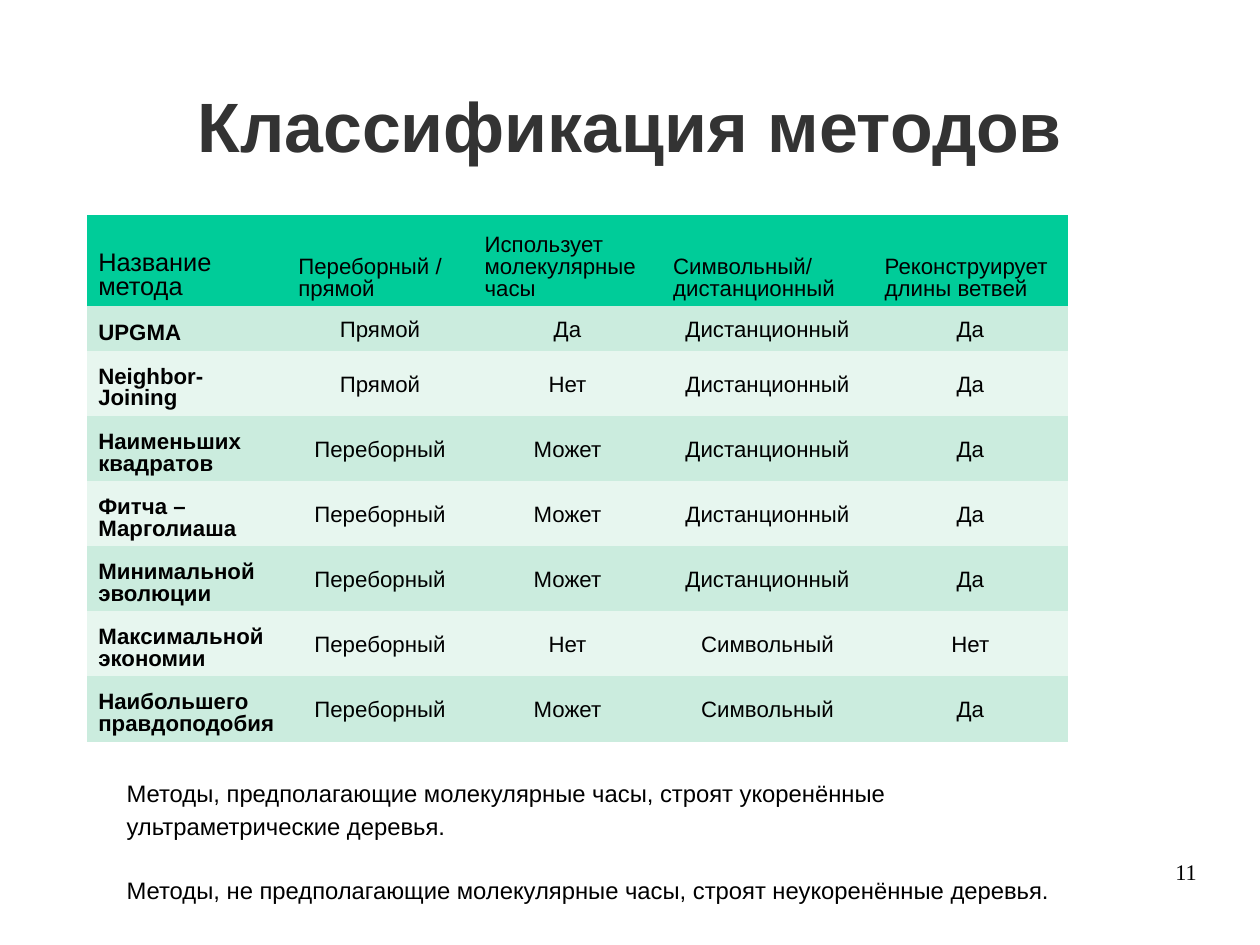
from lxml.etree import SubElement
from pptx import Presentation
from pptx.dml.color import RGBColor as RGB
from pptx.enum.text import MSO_ANCHOR as Anchor, PP_ALIGN as Align
from pptx.oxml.ns import qn
from pptx.util import Inches, Pt

COLORS = {
    "title": "333333",
    "text": "000000",
    "head": "00CC99",
    "dark": "CBECDE",
    "light": "E7F6EF",
}


def write(box, text, size=14, color="text", font="Arial", bold=False,
          align=Align.LEFT, anchor=Anchor.TOP, space=0.87, gap=0,
          pad=(0.1, 0.09, 0.1, 0.05)):
    box.margin_left, box.margin_top, box.margin_right, box.margin_bottom = map(Inches, pad)
    box.vertical_anchor = anchor
    frame = getattr(box, "text_frame", box)
    frame.word_wrap = True
    for i, line in enumerate(text.split("\n")):
        para = frame.add_paragraph() if i else frame.paragraphs[0]
        para.text = line
        para.alignment = align
        para.line_spacing = space
        para.space_before = Pt(gap if i else 0)
        for run in para.runs:
            run.font.size = Pt(size)
            run.font.name = font
            run.font.bold = bold
            run.font.color.rgb = RGB.from_string(COLORS[color])
        for br in para._p.iter(qn("a:br")):
            SubElement(br, qn("a:rPr"), sz=str(size * 100))


prs = Presentation()
prs.slide_width = Inches(28 / 2.54)
prs.slide_height = Inches(21 / 2.54)
slide = prs.slides.add_slide(prs.slide_layouts[6])
shapes = slide.shapes

title = shapes.add_textbox(Inches(0.81), Inches(0.47), Inches(9.41), Inches(1.28))
write(title.text_frame, "Классификация методов", size=44, color="title", bold=True,
      align=Align.CENTER, anchor=Anchor.MIDDLE, space=0.93, pad=(0, 0.04, 0, 0))

notes = shapes.add_textbox(Inches(1.01), Inches(6.71), Inches(8.5), Inches(1.42))
write(notes.text_frame,
      "Методы, предполагающие молекулярные часы, строят укоренённые ультраметрические деревья.\n"
      "Методы, не предполагающие молекулярные часы, строят неукоренённые деревья.",
      size=15, space=1.14, gap=20, pad=(0.1, 0.07, 0.1, 0.05))

rows = [
    ("Название метода", "Переборный / прямой", "Использует молекулярные часы",
     "Символьный/\vдистанционный", "Реконструирует длины ветвей"),
    ("UPGMA", "Прямой", "Да", "Дистанционный", "Да"),
    ("Neighbor-Joining", "Прямой", "Нет", "Дистанционный", "Да"),
    ("Наименьших квадратов", "Переборный", "Может", "Дистанционный", "Да"),
    ("Фитча – Марголиаша", "Переборный", "Может", "Дистанционный", "Да"),
    ("Минимальной эволюции", "Переборный", "Может", "Дистанционный", "Да"),
    ("Максимальной экономии", "Переборный", "Нет", "Символьный", "Нет"),
    ("Наибольшего правдоподобия", "Переборный", "Может", "Символьный", "Да"),
]
widths = [1.75, 1.63, 1.65, 1.85, 1.7]
heights = [0.8, 0.39] + [0.57] * 6

table = shapes.add_table(len(rows), len(widths), Inches(0.76), Inches(1.88),
                         Inches(sum(widths)), Inches(sum(heights))).table
table.first_row = False
table.horz_banding = False
for col, width in zip(table.columns, widths):
    col.width = Inches(width)
for r, (row, height) in enumerate(zip(rows, heights)):
    table.rows[r].height = Inches(height)
    fill = "head" if r == 0 else "dark" if r % 2 else "light"
    for c, text in enumerate(row):
        cell = table.cell(r, c)
        cell.fill.solid()
        cell.fill.fore_color.rgb = RGB.from_string(COLORS[fill])
        label = r == 0 or c == 0
        write(cell, text, size=16 if r == c == 0 else 14, bold=r > 0 and c == 0,
              align=Align.LEFT if label else Align.CENTER,
              anchor=Anchor.BOTTOM if label else Anchor.MIDDLE)
style = table._tbl.tblPr.find(qn("a:tableStyleId"))
style.text = "{2D5ABB26-0587-4C30-8999-92F81FD0307C}"

page = shapes.add_textbox(Inches(7.9), Inches(7.53), Inches(2.57), Inches(0.57))
write(page.text_frame, "11", font="Times New Roman", align=Align.RIGHT,
      space=0.95, pad=(0, 0, 0, 0))

prs.save("out.pptx")
